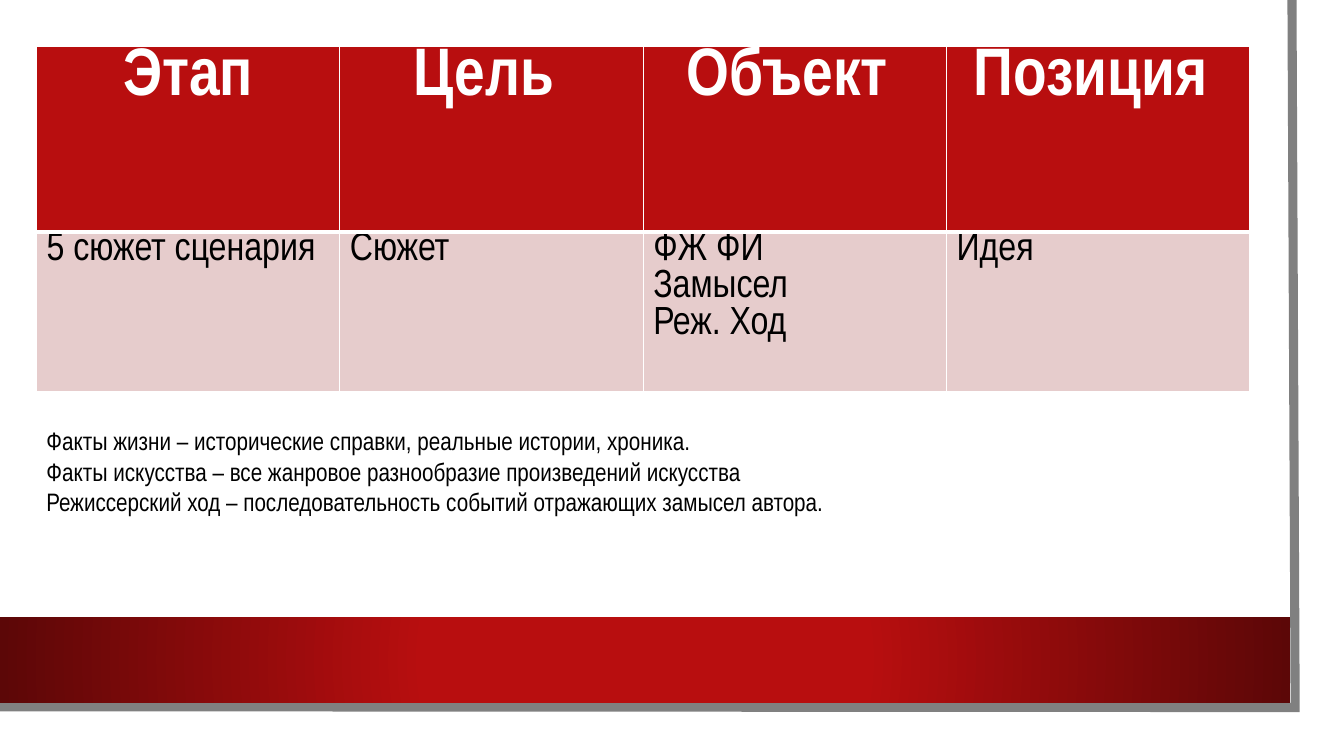
"""Build the slide with the script stage table, its notes and the red band."""
from typing import NamedTuple

from lxml import etree
from pptx import Presentation
from pptx.dml.color import RGBColor
from pptx.enum import shapes, text
from pptx.oxml import ns
from pptx.util import Cm, Pt

WHITE = RGBColor(0xFF, 0xFF, 0xFF)
BLACK = RGBColor(0, 0, 0)
GREY = RGBColor(0x80, 0x80, 0x80)
RED = RGBColor(0xB8, 0x0E, 0x0F)
DARK_RED = RGBColor(0x5C, 0x07, 0x07)
PINK = RGBColor(0xE6, 0xCC, 0xCC)
FONT = "Arial Narrow"
LEFT, WIDTH = Cm(0.92), Cm(30.58)


class RowStyle(NamedTuple):
    height: float
    size: int
    color: RGBColor
    bold: bool
    align: text.PP_ALIGN
    fill: RGBColor
    bottom: int


HEADER = RowStyle(4.67, 48, WHITE, True, text.PP_ALIGN.CENTER, RED, 3)
BODY = RowStyle(4.01, 28, BLACK, False, text.PP_ALIGN.LEFT, PINK, 1)
ROWS = [
    (HEADER, ["Этап", "Цель ", "Объект ", "Позиция "]),
    (BODY, ["5 сюжет сценария", "Сюжет", "ФЖ ФИ\nЗамысел\nРеж. Ход", "Идея"]),
]
NOTES = """Факты жизни – исторические справки, реальные истории, хроника.
Факты искусства – все жанровое разнообразие произведений искусства
Режиссерский ход – последовательность событий отражающих замысел автора."""


def style_text(tf, size: int, color: RGBColor, bold: bool = False) -> None:
    for p in tf.paragraphs:
        p.font.name = FONT
        p.font.size = Pt(size)
        p.font.bold = bold
        p.font.color.rgb = color


def add_rect(s, top: float, width: float, height: float):
    sp = s.shapes.add_shape(shapes.MSO_SHAPE.RECTANGLE, 0, Cm(top), Cm(width), Cm(height))
    sp.shadow.inherit = False
    sp.line.fill.background()
    return sp


def add_frame(s) -> None:
    page = add_rect(s, 0, 33.27, 18.47)
    page.fill.solid()
    page.fill.fore_color.rgb = WHITE

    builder = s.shapes.build_freeform(Cm(32.56), 0)
    builder.add_line_segments([(Cm(32.64), Cm(17.83)), (Cm(-0.08), Cm(17.81))], close=False)
    edge = builder.convert_to_shape()
    edge.shadow.inherit = False
    edge.fill.background()
    edge.line.color.rgb = GREY
    edge.line.width = Pt(6.5)
    etree.SubElement(edge.line._get_or_add_ln(), ns.qn("a:miter"), lim="800000")

    band = add_rect(s, 15.55, 32.51, 2.16)
    band.fill.gradient()
    for stop, position, color in zip(band.fill.gradient_stops, (0.34, 1), (RED, DARK_RED)):
        stop.position = position
        stop.color.rgb = color
    lin = band._element.spPr.find(".//" + ns.qn("a:lin"))
    radial = etree.Element(ns.qn("a:path"), path="circle")
    etree.SubElement(radial, ns.qn("a:fillToRect"), l="50000", t="50000", r="50000", b="50000")
    lin.getparent().replace(lin, radial)


def set_borders(cell, bottom: int) -> None:
    tc_pr = cell._tc.get_or_add_tcPr()
    for i, (side, width) in enumerate(zip("LRTB", (1, 1, 1, bottom))):
        ln = etree.Element(ns.qn(f"a:ln{side}"), w=str(Pt(width)))
        fill = etree.SubElement(ln, ns.qn("a:solidFill"))
        etree.SubElement(fill, ns.qn("a:srgbClr"), val=str(WHITE))
        tc_pr.insert(i, ln)


def add_stages(s) -> None:
    height = Cm(sum(style.height for style, _ in ROWS))
    table = s.shapes.add_table(len(ROWS), 4, LEFT, Cm(1.18), WIDTH, height).table
    for row, (style, labels) in zip(table.rows, ROWS):
        row.height = Cm(style.height)
        for cell, label in zip(row.cells, labels):
            cell.text = label
            cell.margin_top = cell.margin_bottom = 0
            cell.fill.solid()
            cell.fill.fore_color.rgb = style.fill
            set_borders(cell, style.bottom)
            style_text(cell.text_frame, style.size, style.color, style.bold)
            for p in cell.text_frame.paragraphs:
                p.alignment = style.align


def add_notes(s) -> None:
    tf = s.shapes.add_textbox(LEFT, Cm(10.6), WIDTH, Cm(2.57)).text_frame
    tf.word_wrap = True
    tf.auto_size = text.MSO_AUTO_SIZE.SHAPE_TO_FIT_TEXT
    tf.text = NOTES
    style_text(tf, 18, BLACK)


def main() -> None:
    prs = Presentation()
    prs.slide_width, prs.slide_height = Cm(33.87), Cm(19.05)
    s = prs.slides.add_slide(prs.slide_layouts[6])
    add_frame(s)
    add_stages(s)
    add_notes(s)
    prs.save("out.pptx")


if __name__ == "__main__":
    main()
